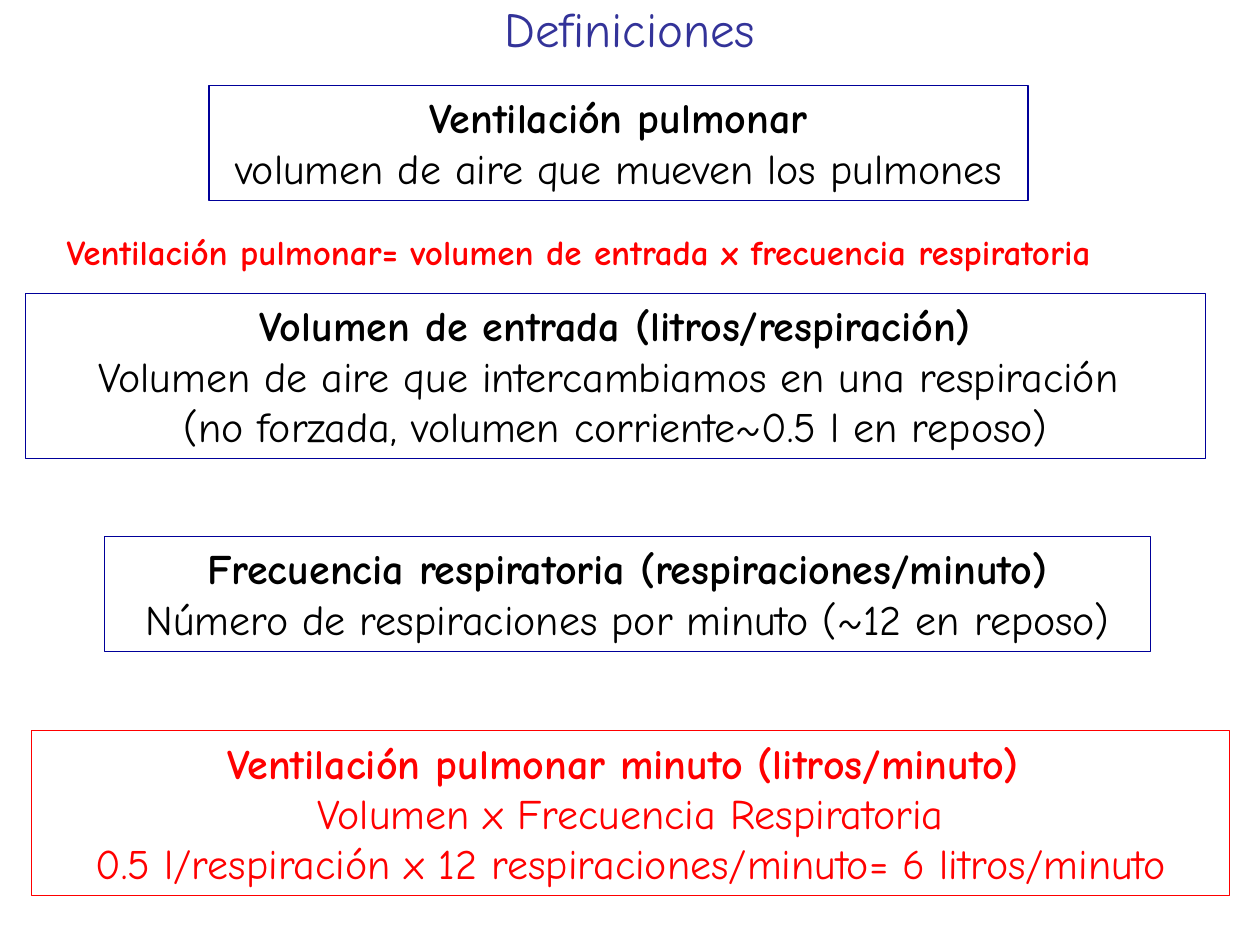
from pptx import Presentation
from pptx.dml.color import RGBColor
from pptx.enum.shapes import MSO_SHAPE
from pptx.enum.text import MSO_ANCHOR, PP_ALIGN
from pptx.util import Inches, Pt

RECT = MSO_SHAPE.RECTANGLE
TOP, MIDDLE = MSO_ANCHOR.TOP, MSO_ANCHOR.MIDDLE
LEFT, CENTER = PP_ALIGN.LEFT, PP_ALIGN.CENTER
FONT = "Comic Neue"
RED, NAVY, BLACK, VIOLET = "FF0000", "000099", "000000", "333399"


def color(code):
    return RGBColor.from_string(code)


def write(shape, lines, size, ink, bold=True, align=CENTER, anchor=TOP):
    """Fill the shape with lines; only the first one can be bold."""
    frame = shape.text_frame
    frame.word_wrap = True
    frame.vertical_anchor = anchor
    for i, line in enumerate(lines):
        para = frame.paragraphs[0] if i == 0 else frame.add_paragraph()
        para.alignment = align
        run = para.add_run()
        run.text = line
        style = {"name": FONT, "size": Pt(size), "bold": bold and i == 0}
        for key, value in style.items():
            setattr(run.font, key, value)
        run.font.color.rgb = color(ink)


deck = Presentation()
deck.slide_width, deck.slide_height = Inches(10), Inches(7.5)
slide = deck.slides.add_slide(deck.slide_layouts[6])
shapes = slide.shapes

title = shapes.add_textbox(Inches(0), Inches(-0.11), Inches(10), Inches(0.67))
write(title, ["Definiciones"], 28, VIOLET, bold=False, anchor=MIDDLE)

# left, top, width, line colour, text colour, lines
boxes = [
    (1.66, 0.68, 6.5, NAVY, BLACK, [
        "Ventilación pulmonar",
        "volumen de aire que mueven los pulmones"]),
    (0.2, 2.33, 9.37, NAVY, BLACK, [
        "Volumen de entrada (litros/respiración)",
        "Volumen de aire que intercambiamos en una respiración ",
        "(no forzada, volumen corriente~0.5 l en reposo)"]),
    (0.83, 4.26, 8.3, NAVY, BLACK, [
        "Frecuencia respiratoria (respiraciones/minuto)",
        "Número de respiraciones por minuto (~12 en reposo)"]),
    (0.25, 5.8, 9.51, RED, RED, [
        "Ventilación pulmonar minuto (litros/minuto) ",
        "Volumen x Frecuencia Respiratoria",
        "0.5 l/respiración x 12 respiraciones/minuto= 6 litros/minuto"]),
]
for left, top, width, edge, ink, lines in boxes:
    height = 0.11 + 0.4 * len(lines)
    box = shapes.add_shape(RECT, Inches(left), Inches(top),
                           Inches(width), Inches(height))
    box.shadow.inherit = False
    box.fill.background()
    box.line.color.rgb = color(edge)
    box.line.width = Pt(0.75)
    write(box, lines, 24, ink)

rule = shapes.add_textbox(Inches(0.43), Inches(1.78), Inches(9.32), Inches(0.43))
write(rule, ["Ventilación pulmonar= volumen de entrada x frecuencia respiratoria"],
      20, RED, align=LEFT)

deck.save("out.pptx")
